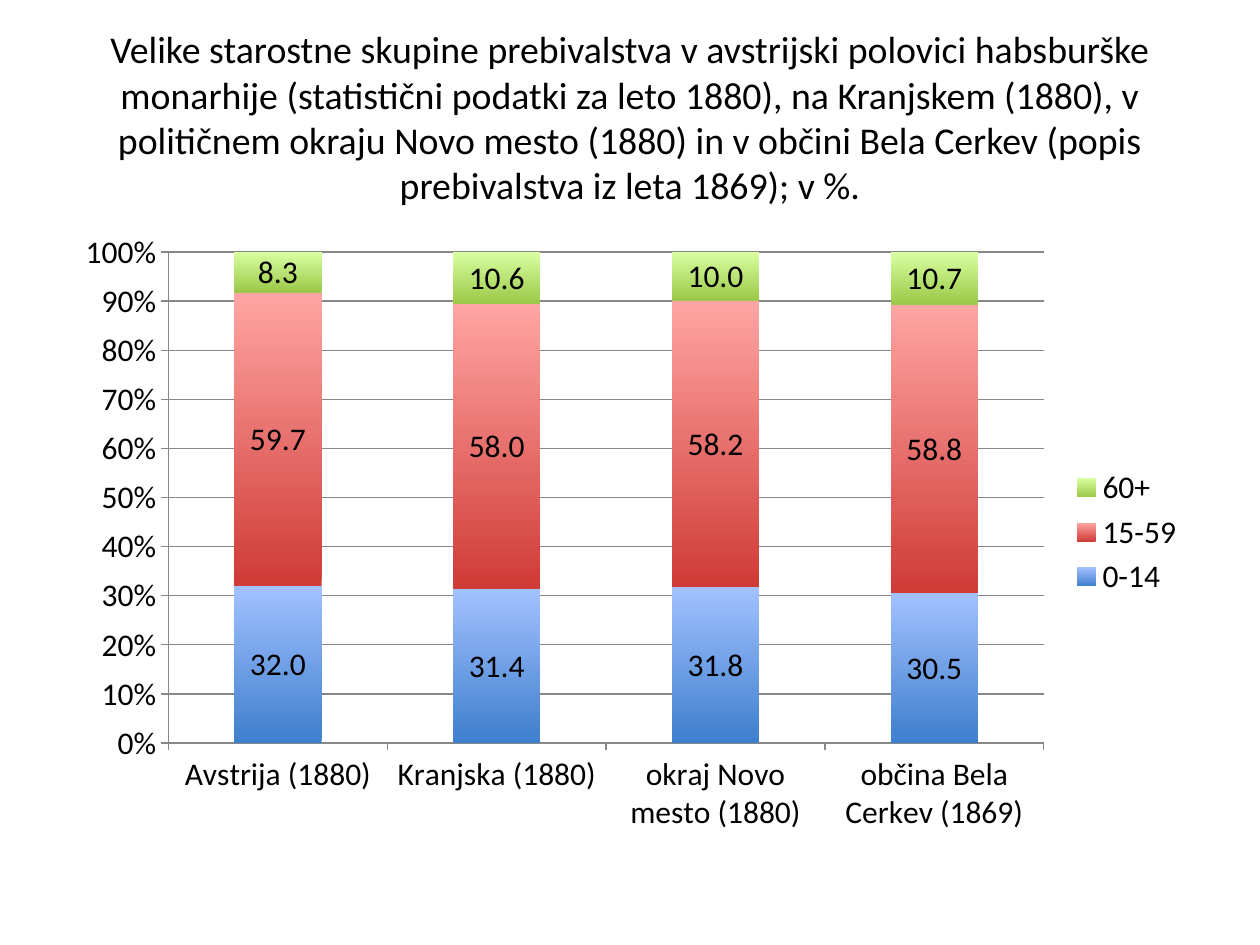
from pptx import Presentation
from pptx.chart.data import CategoryChartData
from pptx.dml.color import RGBColor
from pptx.enum.chart import XL_CHART_TYPE, XL_LABEL_POSITION, XL_LEGEND_POSITION, XL_TICK_MARK
from pptx.enum.text import MSO_ANCHOR, PP_ALIGN
from pptx.util import Inches, Pt

FONT = "Calibri"
BLACK = "000000"
GREY = "878787"
TITLE = (
    "Velike starostne skupine prebivalstva v avstrijski polovici habsburške "
    "monarhije (statistični podatki za leto 1880), na Kranjskem (1880), v "
    "političnem okraju Novo mesto (1880) in v občini Bela Cerkev (popis "
    "prebivalstva iz leta 1869); v %."
)
PLACES = ["Avstrija (1880)", "Kranjska (1880)", "okraj Novo mesto (1880)", "občina Bela Cerkev (1869)"]
AGE_GROUPS = [
    ("0-14", (32, 31.4, 31.8, 30.5), ("3E7FCD", "A3C1FF")),
    ("15-59", (59.7, 58, 58.2, 58.8), ("CF3B37", "FFA5A3")),
    ("60+", (8.3, 10.6, 10, 10.7), ("9BC848", "D9FFA1")),
]


def color(value):
    """Turn a hex string into a colour."""
    return RGBColor.from_string(value)


def style_font(font, size, fill=BLACK):
    """Set typeface, size and colour of a font."""
    font.name = FONT
    font.size = Pt(size)
    font.bold = False
    font.color.rgb = color(fill)


def add_text(page, text, left, top, width, height, size=18, align=PP_ALIGN.LEFT, anchor=MSO_ANCHOR.TOP):
    """Add a wrapping text box with one formatted paragraph."""
    box = page.shapes.add_textbox(Inches(left), Inches(top), Inches(width), Inches(height))
    frame = box.text_frame
    frame.word_wrap = True
    frame.vertical_anchor = anchor
    para = frame.paragraphs[0]
    para.alignment = align
    span = para.add_run()
    span.text = text
    style_font(span.font, size)


def style_line(line):
    """Draw a thin grey chart line."""
    line.color.rgb = color(GREY)
    line.width = Pt(0.75)


def style_series(series, bottom, top):
    """Fill a series with a vertical gradient and show its values."""
    series.format.fill.gradient()
    series.format.fill.gradient_angle = 90
    for stop, value in zip(series.format.fill.gradient_stops, (bottom, top)):
        stop.color.rgb = color(value)
    labels = series.data_labels
    labels.show_value = True
    labels.number_format = "0.0"
    labels.number_format_is_linked = False
    labels.position = XL_LABEL_POSITION.CENTER
    style_font(labels.font, 18)


def add_age_chart(page, left, top, width, height):
    """Add the stacked percentage chart of age groups."""
    data = CategoryChartData(number_format="0.0")
    data.categories = PLACES
    for name, values, _ in AGE_GROUPS:
        data.add_series(name, values)
    chart = page.shapes.add_chart(
        XL_CHART_TYPE.COLUMN_STACKED_100,
        Inches(left), Inches(top), Inches(width), Inches(height), data,
    ).chart
    style_font(chart.font, 18)
    chart.has_title = False
    chart.has_legend = True
    chart.legend.position = XL_LEGEND_POSITION.RIGHT
    chart.legend.include_in_layout = False
    style_font(chart.legend.font, 18)

    plot = chart.plots[0]
    plot.gap_width = 150
    plot.overlap = 100
    plot.vary_by_categories = False
    for series, (_, _, shades) in zip(plot.series, AGE_GROUPS):
        style_series(series, *shades)

    for axis in (chart.category_axis, chart.value_axis):
        axis.major_tick_mark = XL_TICK_MARK.OUTSIDE
        axis.minor_tick_mark = XL_TICK_MARK.NONE
        style_line(axis.format.line)
        style_font(axis.tick_labels.font, 18)
    chart.value_axis.has_major_gridlines = True
    style_line(chart.value_axis.major_gridlines.format.line)
    chart.value_axis.tick_labels.number_format = "0%"
    chart.value_axis.tick_labels.number_format_is_linked = False


def main():
    """Build and save the slide."""
    deck = Presentation()
    deck.slide_width = Inches(10)
    deck.slide_height = Inches(7.5)
    page = deck.slides.add_slide(deck.slide_layouts[6])
    add_text(page, TITLE, 0.5, 0.3, 9, 1.25, size=21.6, align=PP_ALIGN.CENTER, anchor=MSO_ANCHOR.MIDDLE)
    add_age_chart(page, 0.5, 1.75, 9, 4.95)
    deck.save("out.pptx")


if __name__ == "__main__":
    main()
